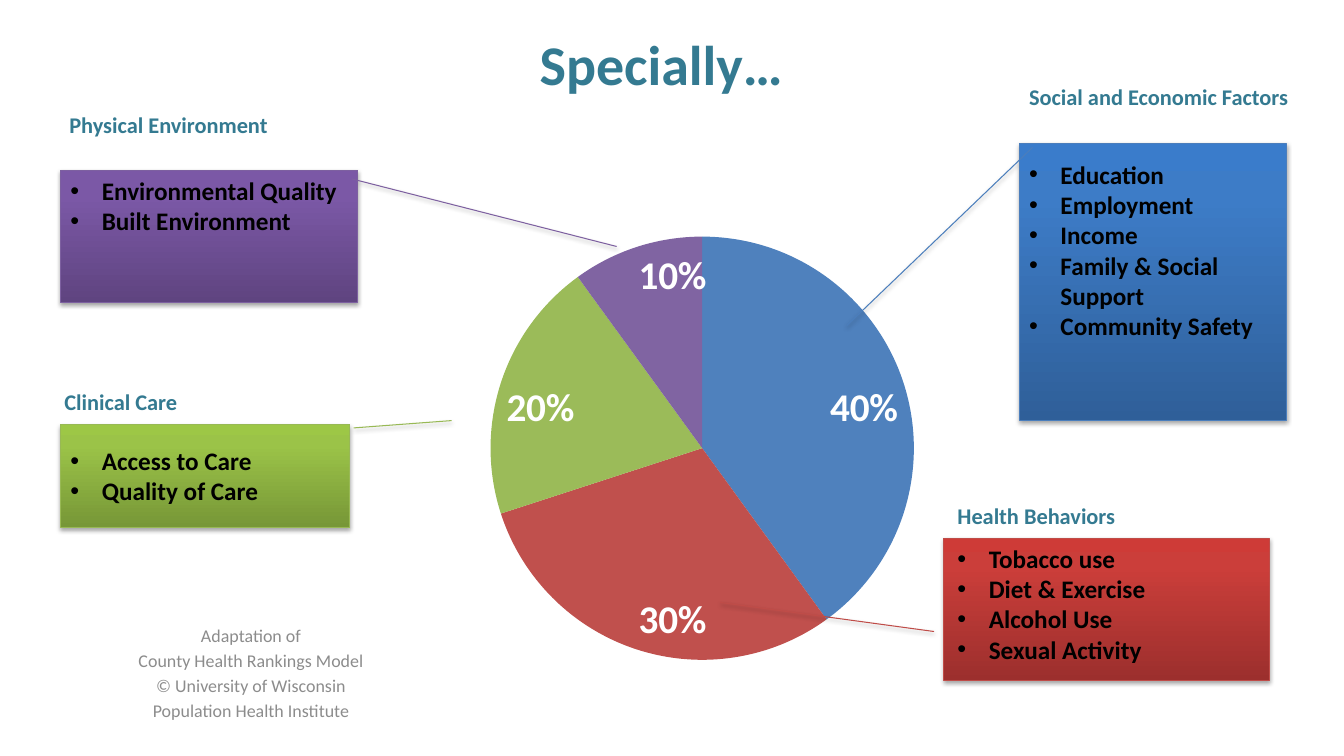
import copy
from dataclasses import dataclass

import pptx
import pptx.chart.data
import pptx.dml.color
import pptx.enum.chart
import pptx.enum.shapes
import pptx.enum.text
import pptx.oxml
import pptx.oxml.ns
import pptx.util

rgb = pptx.dml.color.RGBColor.from_string
Pt = pptx.util.Pt
qn = pptx.oxml.ns.qn
ALIGN = pptx.enum.text.PP_ALIGN
WIDTH, HEIGHT = pptx.util.Inches(13.33), pptx.util.Inches(7.5)


@dataclass(frozen=True)
class Theme:
    """Colours and type sizes of the slide."""
    font: str = "Calibri"
    accent: str = "347A91"
    black: str = "000000"
    white: str = "FFFFFF"
    muted: str = "8C8C8C"
    title: float = 40
    percent: float = 28
    body: float = 18
    heading: float = 16
    credit: float = 12.8
    slices: tuple = ("4F81BD", "C0504D", "9BBB59", "8064A2")


THEME = Theme()
STOPS = (0, 0.8, 1)
INDENT = 2.34
HEADING_SIZE = (21.67, 4.93)

FACTORS = [
    dict(heading="Social and Economic Factors", share=40,
         items=["Education", "Employment", "Income", "Family & Social Support", "Community Safety"],
         box=(75.83, 18.93, 19.88, 36.67), heading_shift=(0, -8.53), list_shift=(0, 1.47),
         list_width=18.6, pointer=(0.016, 0.05, 0.658, -0.645),
         shades=("2F5F99", "3D7CC7", "3A7CCB"), border="4B7EBC"),
    dict(heading="Health Behaviors", share=30,
         items=["Tobacco use", "Diet & Exercise", "Alcohol Use", "Sexual Activity"],
         box=(70.2, 71.2, 24.23, 18.8), heading_shift=(0.3, -5.47), list_shift=(0.3, 0),
         list_width=24.23, pointer=(0.656, -0.029, 0.451, -0.686),
         shades=("9C2F2D", "CB3E3A", "CE3B37"), border="BF4C48"),
    dict(heading="Clinical Care", share=20, items=["Access to Care", "Quality of Care"],
         box=(4.5, 56.13, 21.53, 13.6), heading_shift=(-0.45, -5.47), list_shift=(0, 2.13),
         list_width=21.4, pointer=(0.035, 1.013, -0.037, 1.352),
         shades=("779737", "9BC348", "9DC746"), border="98B955"),
    dict(heading="Physical Environment", share=10,
         items=["Environmental Quality", "Built Environment"],
         box=(4.5, 22.53, 22.13, 17.47), heading_shift=(-0.08, -8.53), list_shift=(0, 0),
         list_width=22.13, pointer=(0.065, 0.979, 0.577, 1.87),
         shades=("5F4480", "7B58A6", "7C57A8"), border="7D60A0"),
]
CREDIT = ["Adaptation of", "County Health Rankings Model",
          "© University of Wisconsin", "Population Health Institute"]


def columns(count):
    """Return the width of a number of hundredths of the slide's width."""
    return int(WIDTH * count / 100)


def rows(count):
    """Return the height of a number of hundredths of the slide's height."""
    return int(HEIGHT * count / 100)


def place(box):
    """Turn a box in columns and rows into slide lengths."""
    left, top, width, height = box
    return columns(left), rows(top), columns(width), rows(height)


def assign(target, values):
    """Set each named value on the target."""
    for name, value in values.items():
        setattr(target, name, value)


def style_font(font, size, colour, bold=True):
    """Apply the theme's typeface with a size, colour and weight."""
    assign(font, dict(name=THEME.font, size=Pt(size), bold=bold))
    font.color.rgb = rgb(colour)


def element(markup):
    """Build a drawing element from its markup."""
    head, mark, tail = markup.partition(" ")
    return pptx.oxml.parse_xml(f"<{head} {pptx.oxml.ns.nsdecls('a', 'c')} {tail}")


def add_text(slide, box, lines, size, colour, bold=True, bullets=False, gap=0,
             align=ALIGN.LEFT, anchor=pptx.enum.text.MSO_ANCHOR.TOP):
    """Write lines as paragraphs in a wrapped text box."""
    frame = slide.shapes.add_textbox(*place(box)).text_frame
    assign(frame, dict(word_wrap=True, vertical_anchor=anchor))
    for index, line in enumerate(lines):
        paragraph = frame.add_paragraph() if index else frame.paragraphs[0]
        paragraph.text = line
        paragraph.alignment = align
        if index and gap:
            paragraph.space_before = Pt(gap)
        if bullets:
            properties = paragraph._p.get_or_add_pPr()
            properties.set("marL", str(columns(INDENT)))
            properties.set("indent", str(-columns(INDENT)))
            properties.append(element('a:buFont typeface="Arial"/>'))
            properties.append(element('a:buChar char="•"/>'))
        style_font(paragraph.runs[0].font, size, colour, bold)


def add_callout(slide, box, pointer, shades, border):
    """Draw a shaded, bordered panel with a line pointing to its slice."""
    panel = slide.shapes.add_shape(pptx.enum.shapes.MSO_SHAPE.LINE_CALLOUT_1, *place(box))
    for index, value in enumerate(pointer):
        panel.adjustments[index] = value
    panel.fill.gradient()
    panel.fill.gradient_angle = 90
    properties = panel._element.spPr
    stop_list = properties.find(".//" + qn("a:gsLst"))
    stop_list.append(copy.deepcopy(stop_list[-1]))
    for stop, position, shade in zip(panel.fill.gradient_stops, STOPS, shades):
        stop.position = position
        stop.color.rgb = rgb(shade)
    panel.line.color.rgb = rgb(border)
    panel.line.width = Pt(0.75)
    panel.shadow.inherit = False
    properties.find(qn("a:effectLst")).append(element(
        'a:outerShdw blurRad="40000" dist="23000" dir="5400000" rotWithShape="0">'
        f'<a:srgbClr val="{THEME.black}"><a:alpha val="35000"/></a:srgbClr></a:outerShdw>'))


def add_factor(slide, factor):
    """Place a factor's panel, list and heading relative to its box."""
    left, top, width, height = factor["box"]
    add_callout(slide, factor["box"], factor["pointer"], factor["shades"], factor["border"])
    across, down = factor["list_shift"]
    add_text(slide, (left + across, top + down, factor["list_width"], height - down),
             factor["items"], THEME.body, THEME.black, bullets=True)
    across, down = factor["heading_shift"]
    add_text(slide, (left + across, top + down, *HEADING_SIZE),
             [factor["heading"]], THEME.heading, THEME.accent)


def add_share_pie(slide, box):
    """Chart each factor's share with percentages inside the slices."""
    shares = pptx.chart.data.CategoryChartData()
    shares.categories = [str(number + 1) for number in range(len(FACTORS))]
    shares.add_series("Series 1", [factor["share"] for factor in FACTORS])
    chart = slide.shapes.add_chart(pptx.enum.chart.XL_CHART_TYPE.PIE, *place(box), shares).chart
    assign(chart, dict(has_title=False, has_legend=False))
    style_font(chart.font, THEME.body, THEME.black, False)
    pie = chart.plots[0]
    assign(pie, dict(vary_by_categories=True, has_data_labels=True))
    assign(pie.data_labels, dict(
        show_percentage=True, show_value=False, number_format="0%",
        number_format_is_linked=False,
        position=pptx.enum.chart.XL_LABEL_POSITION.INSIDE_END))
    style_font(pie.data_labels.font, THEME.percent, THEME.white)
    for index, colour in enumerate(THEME.slices):
        fill = pie.series[0].points[index].format.fill
        fill.solid()
        fill.fore_color.rgb = rgb(colour)
    plot_area = chart._chartSpace.find(".//" + qn("c:plotArea"))
    for layout in plot_area.findall(qn("c:layout")):
        plot_area.remove(layout)
    plot_area.insert(0, element(
        'c:layout ><c:manualLayout><c:layoutTarget val="inner"/>'
        '<c:xMode val="edge"/><c:yMode val="edge"/><c:x val="0.35"/><c:y val="0.12"/>'
        '<c:w val="0.35"/><c:h val="0.85"/></c:manualLayout></c:layout>'))


def build_health_factors(deck):
    """Compose the slide of health factors around their pie."""
    slide = deck.slides.add_slide(deck.slide_layouts[6])
    add_share_pie(slide, (5, 23.33, 90, 66))
    for factor in FACTORS:
        add_factor(slide, factor)
    add_text(slide, (2.85, 82, 31.65, 13.47), CREDIT, THEME.credit, THEME.muted,
             bold=False, gap=2.5, align=ALIGN.CENTER)
    add_text(slide, (4.2, 0, 90, 16.67), ["Specially…"], THEME.title, THEME.accent,
             align=ALIGN.CENTER, anchor=pptx.enum.text.MSO_ANCHOR.MIDDLE)


def main():
    """Build and save the deck."""
    deck = pptx.Presentation()
    assign(deck, dict(slide_width=WIDTH, slide_height=HEIGHT))
    build_health_factors(deck)
    deck.save("out.pptx")


if __name__ == "__main__":
    main()
